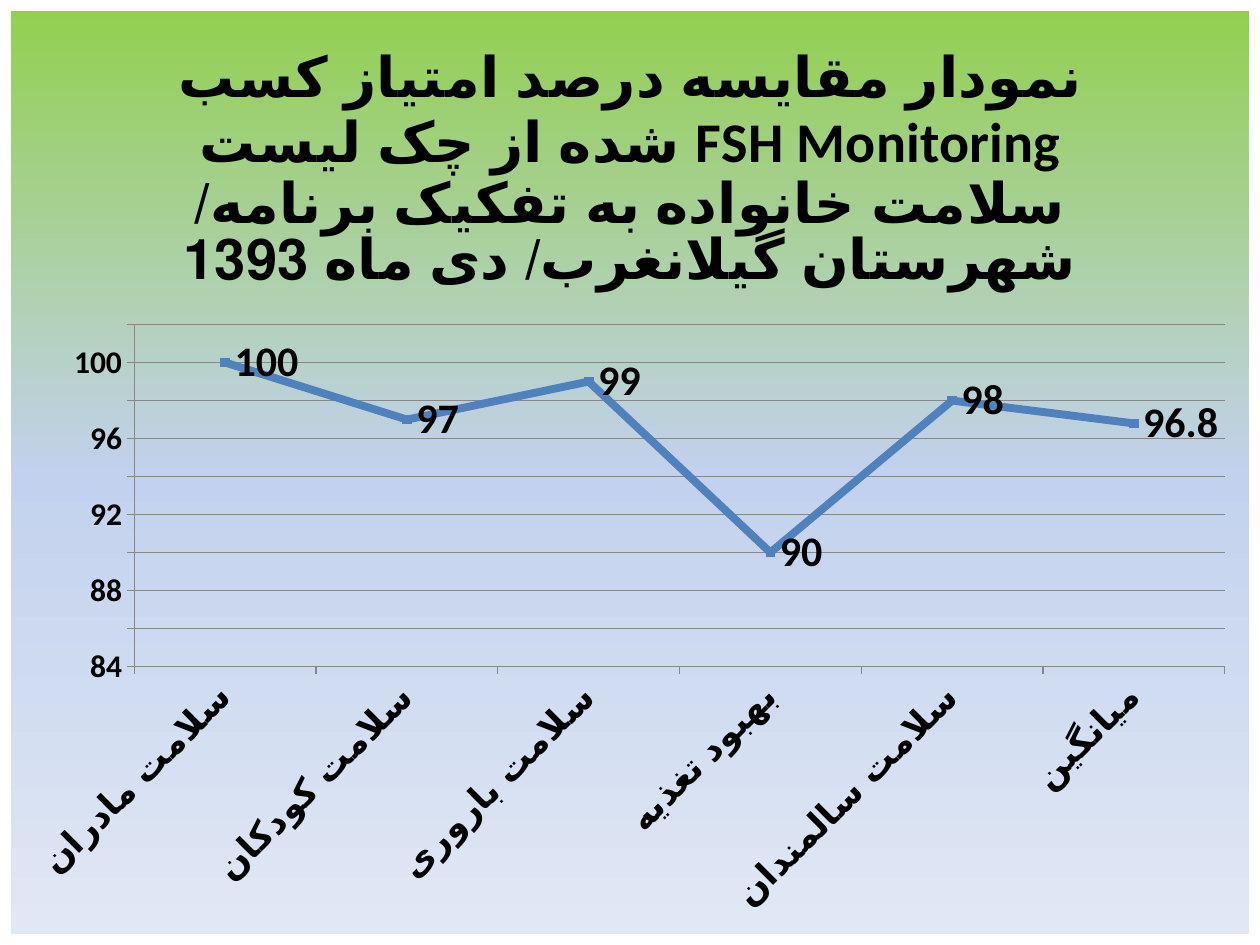
from lxml import etree
from pptx import Presentation
from pptx.chart.data import CategoryChartData as ChartData
from pptx.dml.color import RGBColor
from pptx.enum.chart import XL_CHART_TYPE as ChartType
from pptx.enum.chart import XL_LABEL_POSITION as LabelPosition
from pptx.enum.chart import XL_MARKER_STYLE as MarkerStyle
from pptx.enum.chart import XL_TICK_MARK as TickMark
from pptx.oxml import parse_xml
from pptx.oxml.ns import nsdecls, qn
from pptx.util import Pt

TITLE = (
    "نمودار مقایسه درصد امتیاز کسب شده از چک لیست FSH Monitoring "
    "سلامت خانواده به تفکیک برنامه/ شهرستان گیلانغرب/ دی ماه 1393"
)
SCORES = {
    "سلامت مادران": 100,
    "سلامت کودکان": 97,
    "سلامت باروری": 99,
    "بهبود تغذیه": 90,
    "سلامت سالمندان": 98,
    "میانگین": 96.8,
}
BACKGROUND = [(0, "92D050"), (50, "C2D1ED"), (100, "E1E8F5")]
PLOT_AREA = {"x": 0.1, "y": 0.34, "w": 0.88, "h": 0.37}


def color(value):
    return RGBColor.from_string(value)


class SlideBuilder:
    face = "Calibri"
    ink = "000000"
    grid = "878787"
    accent = "4F81BD"

    def __init__(self, page):
        self.page = page

    def style_font(self, font, size, bold=True):
        font.name = self.face
        font.size = Pt(size)
        font.bold = bold
        font.color.rgb = color(self.ink)

    def style_line(self, line, shade, width):
        line.color.rgb = color(shade)
        line.width = Pt(width)

    def style_axis(self, axis, size):
        axis.major_tick_mark = TickMark.OUTSIDE
        axis.minor_tick_mark = TickMark.NONE
        self.style_line(axis.format.line, self.grid, 0.75)
        self.style_font(axis.tick_labels.font, size)

    def line_chart(self, left, top, width, height, scores):
        data = ChartData()
        data.categories = list(scores)
        data.add_series("Series 1", list(scores.values()))
        frame = self.page.shapes.add_chart(
            ChartType.LINE_MARKERS, Pt(left), Pt(top), Pt(width), Pt(height), data
        )
        chart = frame.chart
        chart.has_legend = False
        self.style_font(chart.font, 10, False)
        chart.plots[0].vary_by_categories = False
        self.style_axis(chart.category_axis, 20)
        self.style_axis(chart.value_axis, 18)
        return chart

    def chart_title(self, chart, text):
        chart.has_title = True
        chart.chart_title.include_in_layout = False
        para = chart.chart_title.text_frame.paragraphs[0]
        para.text = text
        self.style_font(para.font, 32)

    def value_scale(self, chart, low, high, step):
        axis = chart.value_axis
        axis.minimum_scale = low
        axis.maximum_scale = high
        axis.major_unit = step
        axis.has_major_gridlines = True
        self.style_line(axis.major_gridlines.format.line, self.grid, 0.75)

    def score_line(self, chart):
        series = chart.plots[0].series[0]
        series.smooth = False
        self.style_line(series.format.line, self.accent, 4.5)
        marker = series.marker
        marker.style = MarkerStyle.SQUARE
        marker.size = 5
        marker.format.fill.solid()
        marker.format.fill.fore_color.rgb = color(self.accent)
        self.style_line(marker.format.line, self.accent, 0.75)
        labels = series.data_labels
        labels.show_value = True
        labels.position = LabelPosition.RIGHT
        self.style_font(labels.font, 24)

    def slant_categories(self, chart, degrees):
        body = chart.element.find(
            ".//" + qn("c:catAx") + "/" + qn("c:txPr") + "/" + qn("a:bodyPr")
        )
        body.set("rot", str(degrees * 60000))
        body.set("vert", "horz")

    def gradient(self, chart, stops, angle):
        marks = "".join(
            f'<a:gs pos="{place * 1000}"><a:srgbClr val="{shade}"/></a:gs>'
            for place, shade in stops
        )
        fill = parse_xml(
            f'<c:spPr {nsdecls("c", "a")}><a:gradFill><a:gsLst>{marks}</a:gsLst>'
            f'<a:lin ang="{angle * 60000}" scaled="0"/></a:gradFill>'
            "<a:ln><a:noFill/></a:ln></c:spPr>"
        )
        chart.element.find(qn("c:chart")).addnext(fill)

    def place_plot(self, chart, area):
        plot = chart.element.find(".//" + qn("c:plotArea"))
        for old in plot.findall(qn("c:layout")):
            plot.remove(old)
        layout = etree.Element(qn("c:layout"))
        manual = etree.SubElement(layout, qn("c:manualLayout"))
        settings = {"layoutTarget": "inner", "xMode": "edge", "yMode": "edge", **area}
        for name, value in settings.items():
            etree.SubElement(manual, qn(f"c:{name}")).set("val", str(value))
        plot.insert(0, layout)


def main():
    deck = Presentation()
    deck.slide_width, deck.slide_height = Pt(720), Pt(540)
    builder = SlideBuilder(deck.slides.add_slide(deck.slide_layouts[6]))
    chart = builder.line_chart(6, 6, 708, 528, SCORES)
    builder.chart_title(chart, TITLE)
    builder.value_scale(chart, 84, 102, 2)
    builder.score_line(chart)
    builder.slant_categories(chart, -45)
    builder.gradient(chart, BACKGROUND, 90)
    builder.place_plot(chart, PLOT_AREA)
    deck.save("out.pptx")


if __name__ == "__main__":
    main()
